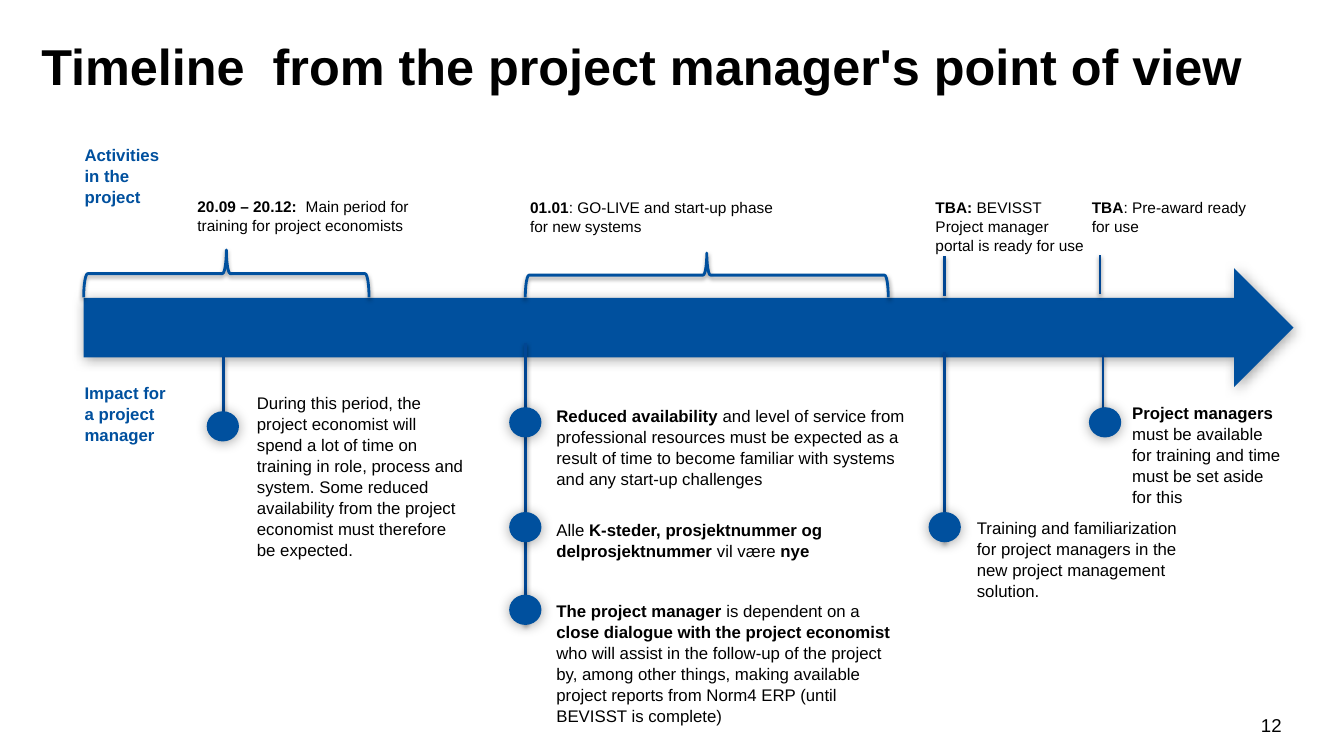
from lxml import etree
from pptx import Presentation, util as u
from pptx.dml import color
from pptx.enum import shapes, text
from pptx.oxml import ns

BLUE, STEM, BLACK = "00509E", "014693", "000000"
FILL_SHADOW = {"alpha": 35, "blur": 9, "distance": 1}
LINE_SHADOW = {"alpha": 38, "blur": 3.1, "distance": 1.6}
DOT_WIDTH, DOT_HEIGHT = 0.32, 0.3

ACTIVITY_NOTES = [
    (1.12, 0.52, 2.53, 0.47, "*20.09 – 20.12:  *Main period for training for project economists"),
    (4.42, 0.53, 2.67, 0.47, "*01.01*: GO-LIVE and start-up phase for new systems"),
    (8.44, 0.53, 1.68, 0.66, "*TBA: *BEVISST Project manager portal is ready for use"),
    (9.99, 0.53, 1.88, 0.47, "*TBA*: Pre-award ready for use"),
]
ACTIVITY_BRACES = [(0.09, 1.1, 2.83, 0.47), (4.47, 1.13, 3.6, 0.44)]
ACTIVITY_STEMS = [(8.63, 1.16, 1.56), (10.17, 1.15, 1.54)]

IMPACT_STEMS = [(1.48, 0.14, 0.84), (4.47, 0, 2.8), (8.63, 0.09, 1.98), (10.2, 0.12, 0.79)]
IMPACT_DOTS = [(1.31, 0.68), (4.31, 0.64), (4.31, 1.68), (4.31, 2.5), (8.47, 1.68), (10.06, 0.64)]
IMPACT_NOTES = [
    (1.71, 0.44, 2.26, 1.72, "During this period, the project economist will spend a lot of time on "
     "training in role, process and system. Some reduced availability from the project economist "
     "must therefore be expected."),
    (4.68, 0.57, 3.75, 0.91, "*Reduced availability *and level of service from professional resources "
     "must be expected as a result of time to become familiar with systems and any start-up challenges"),
    (4.68, 1.7, 3.53, 0.5, "Alle *K-steder, prosjektnummer og delprosjektnummer *vil være *nye*"),
    (4.68, 2.5, 3.63, 1.31, "*The project manager *is dependent on a *close dialogue with the project "
     "economist *who will assist in the follow-up of the project by, among other things, making "
     "available project reports from Norm4 ERP (until BEVISST is complete)"),
    (8.85, 1.68, 2.38, 0.91, "Training and familiarization for project managers in the new project "
     "management solution."),
    (10.39, 0.54, 1.69, 1.11, "*Project managers *must be available for training and time must be set "
     "aside for this"),
]


def rgb(value):
    """Turn a hex string into a colour."""
    return color.RGBColor.from_string(value)


def inches(*lengths):
    """Convert numbers to lengths."""
    return [u.Inches(length) for length in lengths]


def add_shadow(shape, alpha, blur, distance):
    """Give a shape or connector a soft shadow below it."""
    effects = etree.SubElement(shape._element.spPr, ns.qn("a:effectLst"))
    outer = etree.SubElement(effects, ns.qn("a:outerShdw"), blurRad=str(u.Pt(blur)),
                             dist=str(u.Pt(distance)), dir="5400000", rotWithShape="0")
    tint = etree.SubElement(outer, ns.qn("a:srgbClr"), val=BLACK)
    etree.SubElement(tint, ns.qn("a:alpha"), val=str(alpha * 1000))


def write(box, words, size, ink=BLACK, align=text.PP_ALIGN.LEFT, spacing=1.04):
    """Write words into a box, with bold spans between asterisks."""
    frame = box.text_frame
    layout = {"word_wrap": True, "vertical_anchor": text.MSO_ANCHOR.TOP,
              "auto_size": text.MSO_AUTO_SIZE.NONE}
    for name, value in layout.items():
        setattr(frame, name, value)
    para = frame.paragraphs[0]
    para.alignment, para.line_spacing = align, spacing
    for index, part in enumerate(words.split("*")):
        if part:
            span = para.add_run()
            span.text = part
            look = {"name": "Arial", "size": u.Pt(size), "bold": index % 2 == 1}
            for name, value in look.items():
                setattr(span.font, name, value)
            span.font.color.rgb = rgb(ink)


def add_note(page, left, top, width, height, words, size=12, **style):
    """Add a text box."""
    write(page.shapes.add_textbox(*inches(left, top, width, height)), words, size, **style)


def add_solid(page, kind, left, top, width, height):
    """Add a blue shape without outline."""
    shape = page.shapes.add_shape(kind, *inches(left, top, width, height))
    shape.fill.solid()
    shape.fill.fore_color.rgb = rgb(BLUE)
    shape.line.fill.background()
    add_shadow(shape, **FILL_SHADOW)


def add_stem(page, x, top, bottom):
    """Add a vertical line."""
    stem = page.shapes.add_connector(shapes.MSO_CONNECTOR.STRAIGHT, *inches(x, top, x, bottom))
    stem.line.color.rgb, stem.line.width = rgb(STEM), u.Pt(2)
    add_shadow(stem, **LINE_SHADOW)


def add_brace(page, left, top, span, depth):
    """Add a brace that opens downwards over a stretch of the timeline."""
    shift = (span - depth) / 2
    brace = page.shapes.add_shape(shapes.MSO_SHAPE.LEFT_BRACE,
                                  *inches(left + shift, top - shift, depth, span))
    brace.rotation = 90
    brace.fill.background()
    brace.line.color.rgb, brace.line.width = rgb(BLUE), u.Pt(2)
    add_shadow(brace, **LINE_SHADOW)


def add_title(page, left, top, width, height):
    """Place and write the title."""
    title = page.shapes.title
    places = zip(("left", "top", "width", "height"), inches(left, top, width, height))
    for name, value in places:
        setattr(title, name, value)
    write(title, "*Timeline  from the project manager's point of view*", 36, spacing=1)


def add_activities(page, left, top):
    """Draw the project activities above the arrow."""
    add_note(page, left, top, 1.12, 0.71, "*Activities in the project*", ink=BLUE)
    for x, y, width, height, words in ACTIVITY_NOTES:
        add_note(page, left + x, top + y, width, height, words, size=11)
    for x, y, span, depth in ACTIVITY_BRACES:
        add_brace(page, left + x, top + y, span, depth)
    for x, start, end in ACTIVITY_STEMS:
        add_stem(page, left + x, top + start, top + end)


def add_impacts(page, left, top):
    """Draw the impacts on a project manager below the arrow."""
    add_note(page, left, top + 0.34, 1.09, 0.71, "*Impact for a project manager*", ink=BLUE)
    for x, start, end in IMPACT_STEMS:
        add_stem(page, left + x, top + start, top + end)
    for x, y in IMPACT_DOTS:
        add_solid(page, shapes.MSO_SHAPE.OVAL, left + x, top + y, DOT_WIDTH, DOT_HEIGHT)
    for x, y, width, height, words in IMPACT_NOTES:
        add_note(page, left + x, top + y, width, height, words)


def main():
    """Build and save the timeline slide."""
    deck = Presentation()
    deck.slide_width, deck.slide_height = inches(13.33, 7.5)
    page = deck.slides.add_slide(deck.slide_layouts[5])
    add_title(page, 0.31, 0.3, 12.36, 1.31)
    add_solid(page, shapes.MSO_SHAPE.RIGHT_ARROW, 0.83, 2.66, 12, 1.18)
    add_activities(page, 0.74, 1.38)
    add_impacts(page, 0.74, 3.4)
    add_note(page, 12.36, 7.02, 0.5, 0.4, "12", size=13.3, align=text.PP_ALIGN.CENTER)
    deck.save("out.pptx")


if __name__ == "__main__":
    main()
